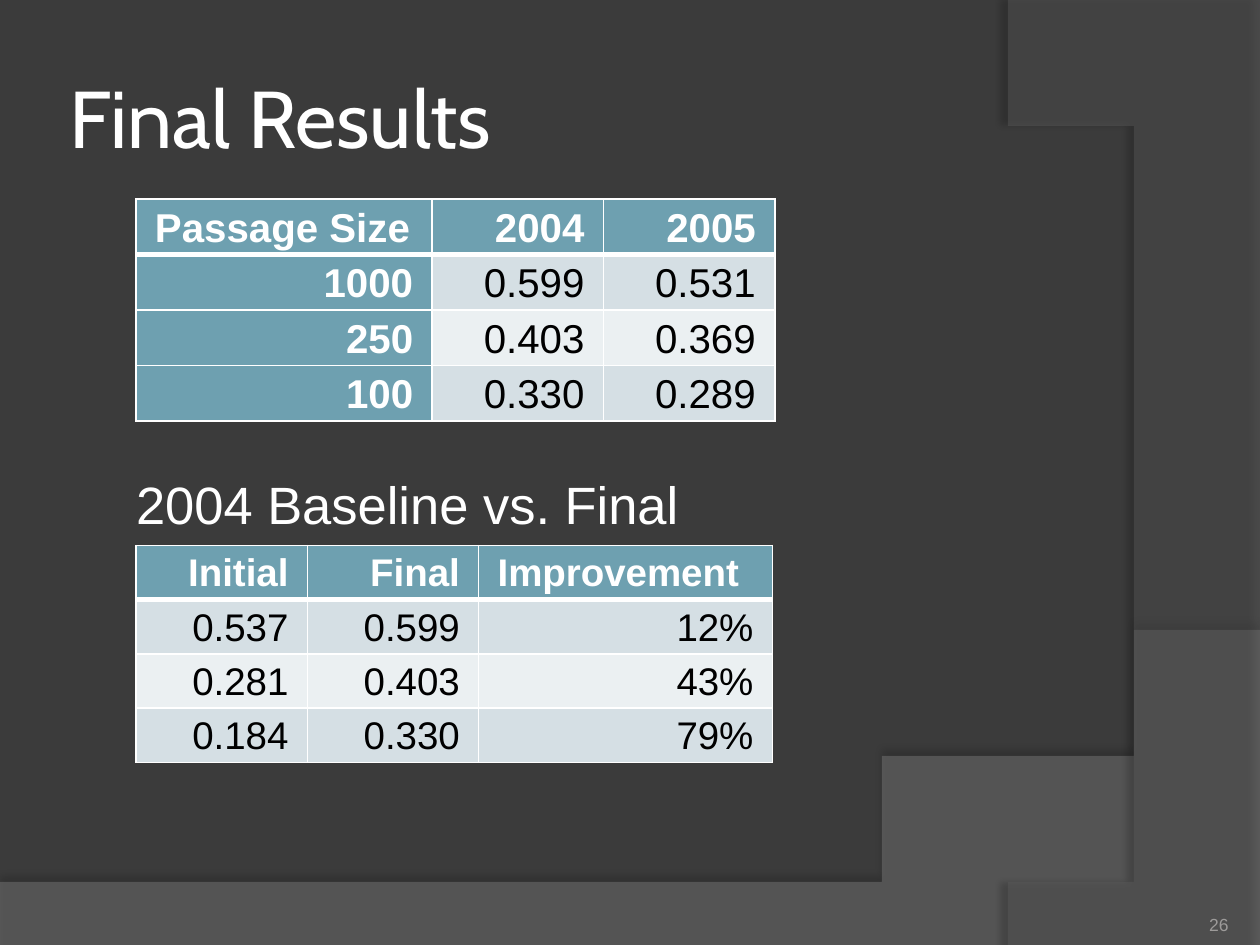
from dataclasses import dataclass

from lxml import etree
from pptx import Presentation
from pptx import util as u
from pptx.dml.color import RGBColor
from pptx.enum import text
from pptx.oxml import parse_xml
from pptx.oxml.ns import nsdecls, qn


@dataclass(frozen=True)
class Theme:
    background: str = "3B3B3B"
    wave: str = "7F7F7F"
    arc: str = "5E5E5E"
    white: str = "FFFFFF"
    black: str = "000000"
    header: str = "6EA0B0"
    bands: tuple = ("D5DFE4", "EBF0F2")
    muted: str = "9D9B9A"
    title_font: str = "Cabin"
    body_font: str = "Arial"
    title_size: int = 46
    heading_size: int = 30
    number_size: int = 10


theme = Theme()
LEFT, RIGHT = text.PP_ALIGN.LEFT, text.PP_ALIGN.RIGHT


def write(frame, words, *, size, color=theme.white, font=theme.body_font, bold=False,
          align=LEFT, anchor=text.MSO_ANCHOR.TOP, margins=(0, 0), spacing=1.0):
    frame.word_wrap = True
    frame.vertical_anchor = anchor
    frame.margin_left = frame.margin_right = u.Inches(margins[0])
    frame.margin_top = frame.margin_bottom = u.Inches(margins[1])
    paragraph = frame.paragraphs[0]
    paragraph.alignment = align
    paragraph.line_spacing = spacing
    run = paragraph.add_run()
    run.text = words
    run.font.name, run.font.size, run.font.bold = font, u.Pt(size), bold
    run.font.color.rgb = RGBColor.from_string(color)


def bezier(start, control_1, control_2, end, steps=60):
    points = []
    for step in range(steps + 1):
        t = step / steps
        weights = ((1 - t) ** 3, 3 * t * (1 - t) ** 2, 3 * t * t * (1 - t), t ** 3)
        corners = (start, control_1, control_2, end)
        points.append(tuple(sum(w * c[axis] for w, c in zip(weights, corners))
                            for axis in (0, 1)))
    return points


presentation = Presentation()
presentation.slide_width, presentation.slide_height = u.Inches(10), u.Inches(7.5)
slide = presentation.slides.add_slide(presentation.slide_layouts[5])
slide.background.fill.solid()
slide.background.fill.fore_color.rgb = RGBColor.from_string(theme.background)

# Background curves: outline, colour, opacity %, shadow opacity %, distance, direction
curves = [
    ([(0, 7.5), (10, 7.5)] + bezier((10, 5.2), (5.59, 7.29), (3.91, 7.19), (0, 7.05)),
     theme.wave, 45, 35, 3.5, 270),
    ([(10, 0.02), (10, 7.5)] + bezier((8.21, 7.5), (9.35, 6.19), (10.18, 3), (8, 0)),
     theme.arc, 40, 45, 4, 180),
]
for outline, color, opacity, shadow_opacity, distance, direction in curves:
    builder = slide.shapes.build_freeform(*outline[0], scale=u.Inches(1))
    builder.add_line_segments(outline[1:], close=True)
    shape = builder.convert_to_shape()
    shape.fill.solid()
    shape.fill.fore_color.rgb = RGBColor.from_string(color)
    shape.line.fill.background()
    shape.shadow.inherit = False
    properties = shape.element.spPr
    fill_color = properties.find(qn("a:solidFill")).find(qn("a:srgbClr"))
    etree.SubElement(fill_color, qn("a:alpha"), val=str(opacity * 1000))
    properties.find(qn("a:effectLst")).append(parse_xml(
        f'<a:outerShdw {nsdecls("a")} blurRad="{u.Pt(4)}" dist="{u.Pt(distance)}" '
        f'dir="{direction * 60000}" algn="ctr" rotWithShape="0">'
        f'<a:srgbClr val="{theme.black}"><a:alpha val="{shadow_opacity * 1000}"/>'
        '</a:srgbClr></a:outerShdw>'))

# Title, in front of the curves
title = slide.shapes.title
title.element.getparent().append(title.element)
title.left, title.top = u.Inches(0.5), u.Inches(0.3)
title.width, title.height = u.Inches(8.17), u.Inches(1.25)
write(title.text_frame, "Final Results", size=theme.title_size, font=theme.title_font,
      anchor=text.MSO_ANCHOR.MIDDLE, margins=(0.05, 0.05))

# Heading of the second table
heading = slide.shapes.add_textbox(u.Inches(1.08), u.Inches(3.75), u.Inches(7.5), u.Inches(0.5))
write(heading.text_frame, "2004 Baseline vs. Final", size=theme.heading_size)

# Tables: top, column widths, row height, type size, header column, left-aligned header, rows
tables = [
    (1.58, (2.35, 1.36, 1.36), 0.44, 23, True, "Passage Size",
     [("Passage Size", "2004", "2005"),
      ("1000", "0.599", "0.531"),
      ("250", "0.403", "0.369"),
      ("100", "0.330", "0.289")]),
    (4.33, (1.36, 1.36, 2.33), 0.43, 22, False, "Improvement",
     [("Initial", "Final", "Improvement"),
      ("0.537", "0.599", "12%"),
      ("0.281", "0.403", "43%"),
      ("0.184", "0.330", "79%")]),
]
for top, widths, row_height, size, header_column, left_header, rows in tables:
    table = slide.shapes.add_table(
        len(rows), len(widths), u.Inches(1.08), u.Inches(top),
        u.Inches(sum(widths)), u.Inches(row_height * len(rows))).table
    table.first_col = header_column
    for column, width in zip(table.columns, widths):
        column.width = u.Inches(width)
    for row_index, values in enumerate(rows):
        table.rows[row_index].height = u.Inches(row_height)
        for column_index, value in enumerate(values):
            cell = table.cell(row_index, column_index)
            is_header = row_index == 0 or (header_column and column_index == 0)
            fill = theme.header if is_header else theme.bands[(row_index - 1) % 2]
            cell.fill.solid()
            cell.fill.fore_color.rgb = RGBColor.from_string(fill)
            cell.margin_left = cell.margin_right = u.Inches(0.15)
            cell.margin_top = cell.margin_bottom = 0
            write(cell.text_frame, value, size=size, bold=is_header, spacing=1.15,
                  color=theme.white if is_header else theme.black,
                  align=LEFT if value == left_header else RIGHT)
            # White borders, thicker under the header row
            borders = {"L": 1, "R": 1, "T": 3 if row_index == 1 else 1,
                       "B": 3 if row_index == 0 else 1}
            for position, (side, weight) in enumerate(borders.items()):
                cell._tc.get_or_add_tcPr().insert(position, parse_xml(
                    f'<a:ln{side} {nsdecls("a")} w="{u.Pt(weight)}"><a:solidFill>'
                    f'<a:srgbClr val="{theme.white}"/></a:solidFill></a:ln{side}>'))

# Slide number
number = slide.shapes.add_textbox(u.Inches(8.92), u.Inches(7.02), u.Inches(0.83), u.Inches(0.4))
write(number.text_frame, "26", size=theme.number_size, color=theme.muted,
      align=RIGHT, anchor=text.MSO_ANCHOR.BOTTOM)

presentation.save("out.pptx")
